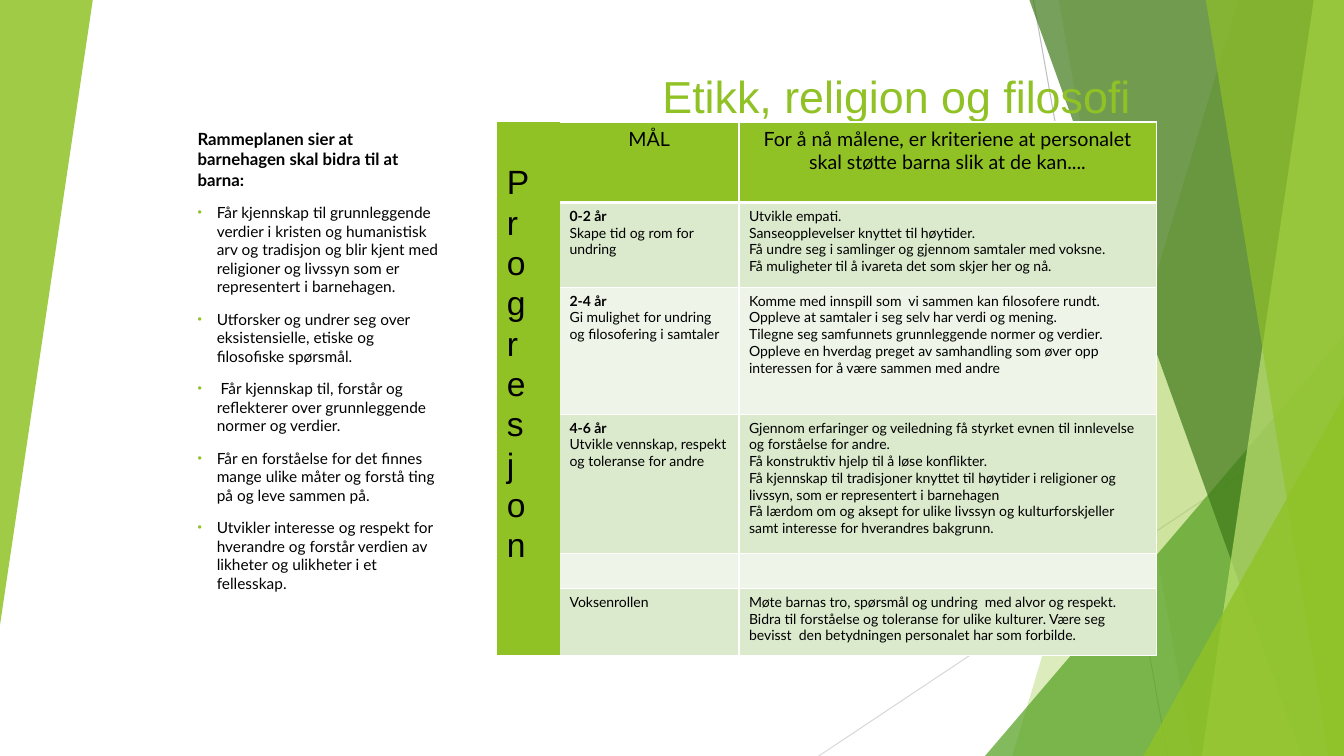
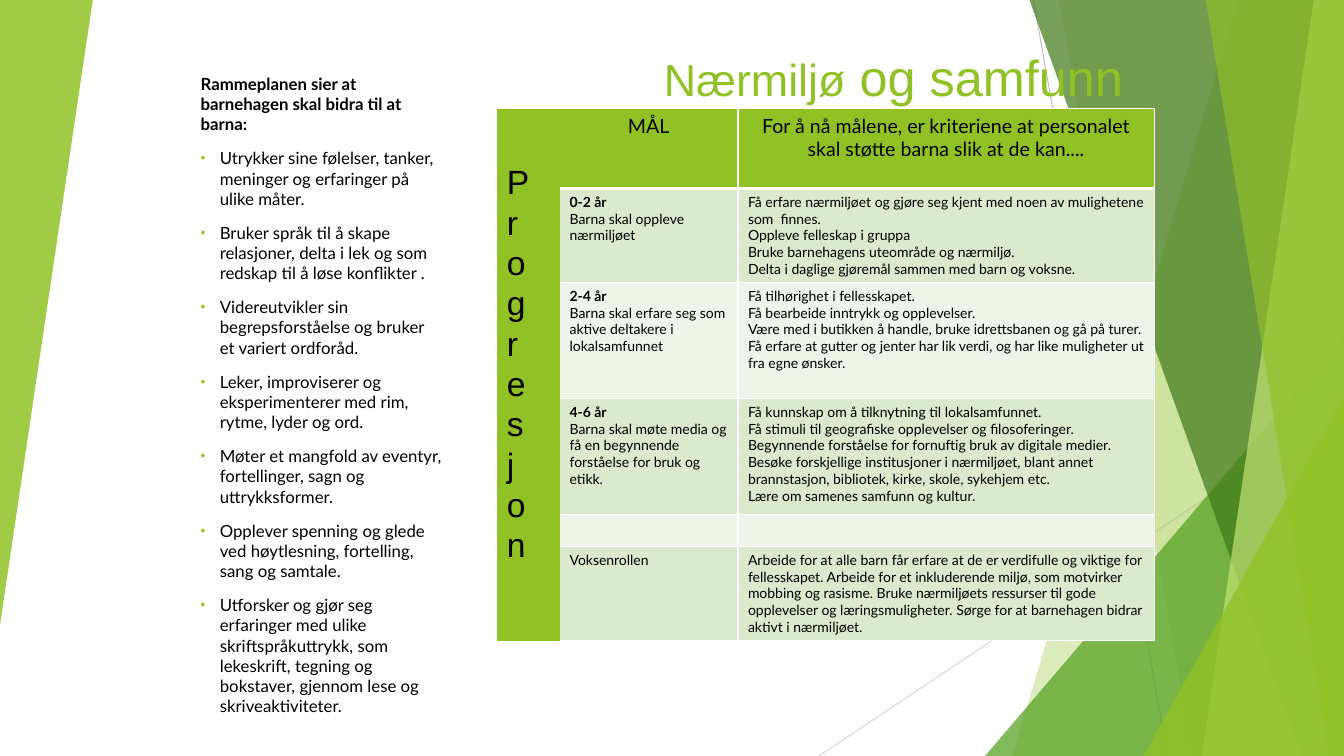
from dataclasses import dataclass

from lxml import etree
from pptx import Presentation
from pptx.dml.color import RGBColor
from pptx.enum.shapes import MSO_CONNECTOR, MSO_SHAPE
from pptx.enum.text import MSO_ANCHOR, MSO_AUTO_SIZE, PP_ALIGN
from pptx.oxml.ns import qn
from pptx.util import Inches, Pt

STRAIGHT = MSO_CONNECTOR.STRAIGHT
TRIANGLE = MSO_SHAPE.ISOSCELES_TRIANGLE
LEFT, CENTER, RIGHT = PP_ALIGN.LEFT, PP_ALIGN.CENTER, PP_ALIGN.RIGHT
TOP, BOTTOM = MSO_ANCHOR.TOP, MSO_ANCHOR.BOTTOM
FIXED, GROW = MSO_AUTO_SIZE.NONE, MSO_AUTO_SIZE.SHAPE_TO_FIT_TEXT
WIDE, HIGH = 13.33, 7.5


@dataclass(frozen=True)
class Theme:
    green: str = "90C226"
    leaf: str = "54A021"
    moss: str = "3F7819"
    lime: str = "C0E474"
    tint: str = "DBE9CD"
    pale: str = "EEF4E8"
    black: str = "000000"
    white: str = "FFFFFF"
    gray: str = "BFBFBF"
    mist: str = "D9D9D9"
    sans: str = "Arial"
    text: str = "Lato"
    title: int = 32
    large: int = 36
    side: int = 24
    head: int = 14
    lead: int = 12
    cell: int = 10


INTRO = "Rammeplanen sier at barnehagen skal bidra til at barna:"
HEADS = ("", "MÅL", "For å nå målene, er kriteriene at personalet "
         "skal støtte barna slik at de kan....")
BLANK = ("", "", [])

ETHICS = {
    "title": [("Etikk, religion og filosofi", Theme.title)],
    "title_box": (2.89, 0.52, 8.43, 0.75),
    "list_box": (1.86, 1.23, 2.6, 6.14),
    "size": 11,
    "points": [
        "Får kjennskap til grunnleggende verdier i kristen og humanistisk arv og "
        "tradisjon og blir kjent med religioner og livssyn som er representert i "
        "barnehagen.",
        "Utforsker og undrer seg over eksistensielle, etiske og filosofiske spørsmål.",
        " Får kjennskap til, forstår og reflekterer over grunnleggende normer og verdier.",
        "Får en forståelse for det finnes mange ulike måter og forstå ting på og leve "
        "sammen på.",
        "Utvikler interesse og respekt for hverandre og forstår verdien av likheter og "
        "ulikheter i et fellesskap.",
    ],
    "top": 1.21,
    "cols": (0.62, 1.78, 4.14),
    "heights": (0.8, 0.84, 1.26, 1.38, 0.35, 0.66),
    "rows": [
        ("0-2 år", "Skape tid og rom for undring", [
            "Utvikle empati.",
            "Sanseopplevelser knyttet til høytider.",
            "Få undre seg i samlinger og gjennom samtaler med voksne.",
            "Få muligheter til å ivareta det som skjer her og nå."]),
        ("2-4 år", "Gi mulighet for undring og filosofering i samtaler", [
            "Komme med innspill som  vi sammen kan filosofere rundt.",
            "Oppleve at samtaler i seg selv har verdi og mening.",
            "Tilegne seg samfunnets grunnleggende normer og verdier.",
            "Oppleve en hverdag preget av samhandling som øver opp interessen for å "
            "være sammen med andre"]),
        ("4-6 år", "Utvikle vennskap, respekt og toleranse for andre", [
            "Gjennom erfaringer og veiledning få styrket evnen til innlevelse og "
            "forståelse for andre.",
            "Få konstruktiv hjelp til å løse konflikter.",
            "Få kjennskap til tradisjoner knyttet til høytider i religioner og "
            "livssyn, som er representert i barnehagen",
            "Få lærdom om og aksept for ulike livssyn og kulturforskjeller samt "
            "interesse for hverandres bakgrunn."]),
        BLANK,
        ("", "Voksenrollen", [
            "Møte barnas tro, spørsmål og undring  med alvor og respekt. Bidra til "
            "forståelse og toleranse for ulike kulturer. Være seg bevisst  den "
            "betydningen personalet har som forbilde."]),
    ],
}

LOCAL = {
    "title": [("Nærmiljø", Theme.title), (" og samfunn", Theme.large)],
    "title_box": (2.81, 0.36, 8.43, 0.75),
    "list_box": (1.89, 0.68, 2.6, 6.14),
    "size": 12,
    "points": [
        "Utrykker sine følelser, tanker, meninger og erfaringer på ulike måter.",
        "Bruker språk til å skape relasjoner, delta i lek og som redskap til å løse "
        "konflikter .",
        "Videreutvikler sin begrepsforståelse og bruker et variert ordforåd.",
        "Leker, improviserer og eksperimenterer med rim, rytme, lyder og ord.",
        "Møter et mangfold av eventyr, fortellinger, sagn og uttrykksformer.",
        "Opplever spenning og glede ved høytlesning, fortelling, sang og samtale.",
        "Utforsker og gjør seg erfaringer med ulike skriftspråkuttrykk, som "
        "lekeskrift, tegning og bokstaver, gjennom lese og skriveaktiviteter.",
    ],
    "top": 1.08,
    "cols": (0.62, 1.77, 4.13),
    "heights": (0.79, 0.73, 1.15, 1.15, 0.32, 0.25),
    "rows": [
        ("0-2 år", "Barna skal oppleve nærmiljøet", [
            "Få erfare nærmiljøet og gjøre seg kjent med noen av mulighetene som  finnes.",
            "Oppleve felleskap i gruppa",
            "Bruke barnehagens uteområde og nærmiljø.",
            "Delta i daglige gjøremål sammen med barn og voksne."]),
        ("2-4 år", "Barna skal erfare seg som aktive deltakere i lokalsamfunnet", [
            "Få tilhørighet i fellesskapet.",
            "Få bearbeide inntrykk og opplevelser.",
            "Være med i butikken å handle, bruke idrettsbanen og gå på turer.",
            "Få erfare at gutter og jenter har lik verdi, og har like muligheter ut "
            "fra egne ønsker."]),
        ("4-6 år", "Barna skal møte media og få en begynnende forståelse for bruk "
         "og etikk.", [
             "Få kunnskap om å tilknytning til lokalsamfunnet.",
             "Få stimuli til geografiske opplevelser og filosoferinger.",
             "Begynnende forståelse for fornuftig bruk av digitale medier.",
             "Besøke forskjellige institusjoner i nærmiljøet, blant annet "
             "brannstasjon, bibliotek, kirke, skole, sykehjem etc.",
             "Lære om samenes samfunn og kultur."]),
        BLANK,
        ("", "Voksenrollen", [
            "Arbeide for at alle barn får erfare at de er verdifulle og viktige for "
            "fellesskapet. Arbeide for et inkluderende miljø, som motvirker mobbing "
            "og rasisme. Bruke nærmiljøets ressurser til gode opplevelser og "
            "læringsmuligheter. Sørge for at barnehagen bidrar aktivt i nærmiljøet."]),
    ],
}


def assign(item, **values):
    for name, value in values.items():
        setattr(item, name, value)


def place(shape, box):
    assign(shape, **dict(zip(("left", "top", "width", "height"), map(Inches, box))))


def node(parent, tag, **values):
    return etree.SubElement(parent, qn(tag), values)


class Deck:
    def __init__(self, theme):
        self.theme = theme
        self.show = Presentation()
        assign(self.show, slide_width=Inches(WIDE), slide_height=Inches(HIGH))
        self.layout = self.show.slide_layouts[0]
        self.slide = None

    def start(self):
        self.slide = self.show.slides.add_slide(self.layout)

    def label(self, para, text, size, font=None, color=None, bold=False):
        run = para.add_run()
        run.text = text
        assign(run.font, size=Pt(size), name=font or self.theme.text, bold=bold)
        run.font.color.rgb = RGBColor.from_string(color or self.theme.black)

    def line(self, start, end, color):
        line = self.slide.shapes.add_connector(
            STRAIGHT, *map(Inches, start + end))
        line.line.width = Pt(0.75)
        line.line.color.rgb = RGBColor.from_string(color)
        node(line.element.spPr, "a:effectLst")
        return line

    def paint(self, shape, color, alpha):
        shape.shadow.inherit = False
        shape.fill.solid()
        shape.fill.fore_color.rgb = RGBColor.from_string(color)
        shape.line.fill.background()
        tone = shape.element.find(".//" + qn("a:srgbClr"))
        node(tone, "a:alpha", val=str(alpha * 1000))
        return shape

    def slant(self, head, foot, color, alpha):
        """Fill the area right of a line from the top edge to the bottom edge."""
        spots = [(head, 0), (WIDE, 0), (WIDE, HIGH), (foot, HIGH)]
        spots = [(Inches(x), Inches(y)) for x, y in spots]
        form = self.slide.shapes.build_freeform(*spots[0])
        form.add_line_segments(spots[1:], close=True)
        return self.paint(form.convert_to_shape(), color, alpha)

    def wedge(self, box, color, alpha, turn=0):
        shape = self.slide.shapes.add_shape(TRIANGLE, *map(Inches, box))
        shape.adjustments[0] = 1
        shape.rotation = turn
        return self.paint(shape, color, alpha)

    def backdrop(self):
        """Draw the shared decoration and move it into the layout."""
        look = self.theme
        parts = [
            self.line((10.25, 0), (11.58, HIGH), look.gray),
            self.line((WIDE, 4.03), (8.12, HIGH), look.mist),
            self.slant(12.28, 10.04, look.green, 30),
            self.slant(10.5, 11.83, look.green, 20),
            self.wedge((9.77, 3.33, 3.56, 4.17), look.leaf, 72),
            self.slant(10.21, 12.91, look.moss, 70),
            self.slant(13.03, 11.92, look.lime, 70),
            self.slant(11.96, 13.18, look.green, 65),
            self.wedge((11.34, 3.93, 1.99, 3.57), look.green, 80),
            self.wedge((0, 0, 0.92, 6.2), look.green, 85, 180),
        ]
        for number, part in enumerate(parts, 100):
            part.element.find(".//" + qn("p:cNvPr")).set("id", str(number))
            self.layout.shapes.element.append(part.element)

    def title(self, runs, box):
        shape = self.slide.shapes.title
        place(shape, box)
        frame = shape.text_frame
        assign(frame, vertical_anchor=BOTTOM, auto_size=FIXED)
        para = frame.paragraphs[0]
        para.alignment = RIGHT
        for text, size in runs:
            self.label(para, text, size, self.theme.sans, self.theme.green)

    def bullet(self, para):
        props = para._p.get_or_add_pPr()
        step = Inches(0.19)
        props.set("marL", str(step))
        props.set("indent", str(-step))
        node(node(props, "a:buClr"), "a:srgbClr", val=self.theme.green)
        node(props, "a:buSzPct", val="80000")
        node(props, "a:buFont", typeface=self.theme.sans)
        node(props, "a:buChar", char="•")

    def points(self, items, size, box):
        shape = self.slide.placeholders[1]
        place(shape, box)
        frame = shape.text_frame
        assign(frame, vertical_anchor=TOP, auto_size=FIXED, word_wrap=True)
        for index, text in enumerate([INTRO] + items):
            para = frame.add_paragraph() if index else frame.paragraphs[0]
            assign(para, alignment=LEFT, space_before=Pt(10))
            if index:
                self.bullet(para)
            self.label(para, text, size if index else self.theme.lead, bold=not index)

    def border(self, cell, row, col):
        props = cell._tc.get_or_add_tcPr()
        for side in "LRTB":
            width = 3 if (row, side) == (0, "B") else 1
            edge = node(props, "a:ln" + side, w=str(Pt(width)))
            if col == 0 or (col, side) == (1, "L"):
                node(edge, "a:noFill")
            else:
                node(node(edge, "a:solidFill"), "a:srgbClr", val=self.theme.white)

    def cell(self, cell, lines, size, align, fill):
        """Fill a cell with lines, each a pair of text and bold."""
        frame = cell.text_frame
        for index, (text, bold) in enumerate(lines):
            para = frame.add_paragraph() if index else frame.paragraphs[0]
            para.alignment = align
            self.label(para, text, size, bold=bold)
        if not lines:
            node(frame.paragraphs[0]._p, "a:endParaRPr", sz=str(size * 100))
        cell.fill.solid()
        cell.fill.fore_color.rgb = RGBColor.from_string(fill)

    def table(self, rows, cols, heights, top):
        look = self.theme
        box = (4.93, top, sum(cols), sum(heights))
        table = self.slide.shapes.add_table(
            len(heights), len(cols), *map(Inches, box)).table
        assign(table, first_row=False, horz_banding=False)
        for col, width in zip(table.columns, cols):
            col.width = Inches(width)
        for row, height in zip(table.rows, heights):
            row.height = Inches(height)
        grid = [[[(text, False)] if text else [] for text in HEADS]]
        for age, goal, aims in rows:
            goals = [(text, bold) for text, bold in ((age, True), (goal, False)) if text]
            grid.append([[], goals, [(aim, False) for aim in aims]])
        for r, line in enumerate(grid):
            for c, lines in enumerate(line):
                cell = table.cell(r, c)
                self.border(cell, r, c)
                fill = look.green if 0 in (r, c) else (look.pale, look.tint)[r % 2]
                size, align = (look.cell, LEFT) if r else (look.head, CENTER)
                self.cell(cell, lines, size, align, fill)
        table.cell(0, 0).merge(table.cell(len(heights) - 1, 0))

    def side(self):
        box = self.slide.shapes.add_textbox(*map(Inches, (4.93, 1.55, 0.39, 4.14)))
        frame = box.text_frame
        assign(frame, word_wrap=True, auto_size=GROW)
        for para, text in ((frame.paragraphs[0], "Progres"),
                           (frame.add_paragraph(), "jon")):
            self.label(para, text, self.theme.side, self.theme.sans)


def main():
    deck = Deck(Theme())
    for index, topic in enumerate((ETHICS, LOCAL)):
        deck.start()
        if index == 0:
            deck.backdrop()
        deck.title(topic["title"], topic["title_box"])
        deck.points(topic["points"], topic["size"], topic["list_box"])
        deck.table(topic["rows"], topic["cols"], topic["heights"], topic["top"])
        deck.side()
    deck.show.save("out.pptx")


if __name__ == "__main__":
    main()
